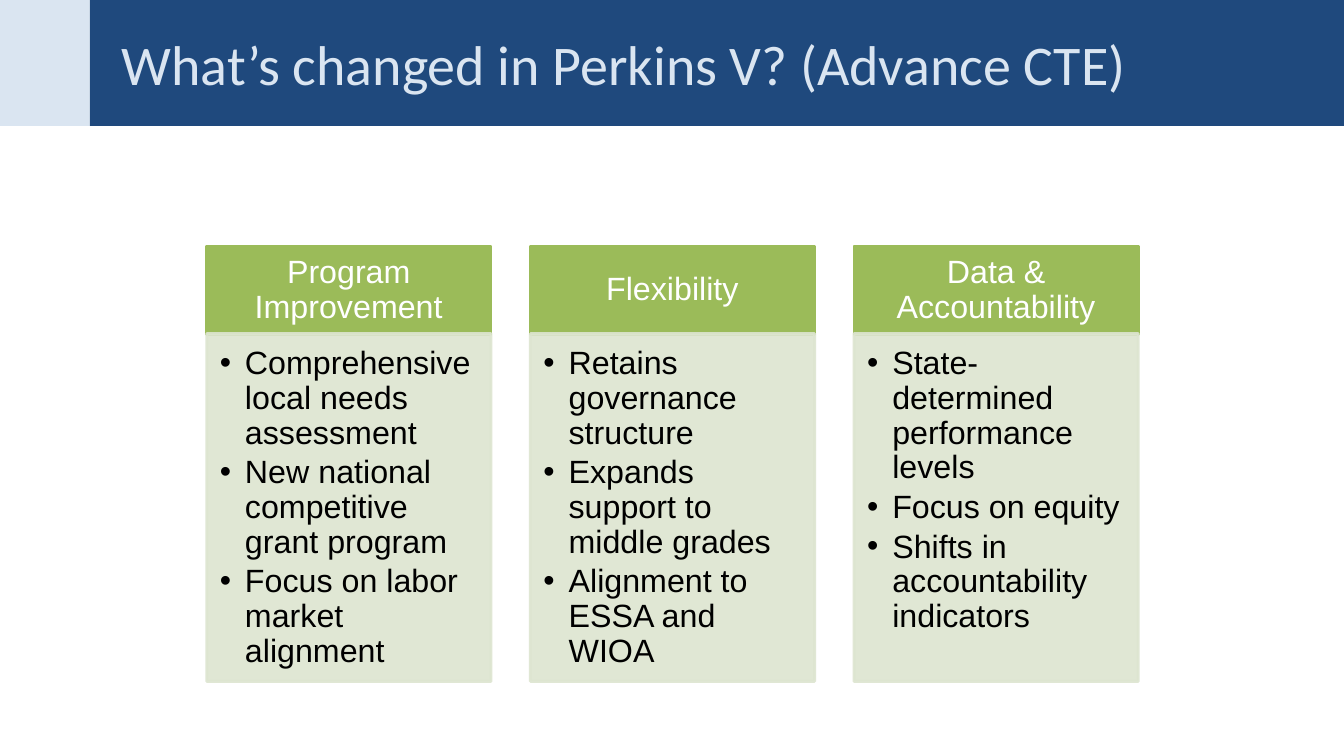
from dataclasses import dataclass

from lxml import etree
from pptx import Presentation
from pptx.dml.color import RGBColor
from pptx.enum.shapes import MSO_SHAPE
from pptx.enum.text import MSO_ANCHOR, PP_ALIGN
from pptx.oxml.ns import qn
from pptx.util import Inches, Pt

RECT = MSO_SHAPE.RECTANGLE
TOP, MIDDLE = MSO_ANCHOR.TOP, MSO_ANCHOR.MIDDLE
LEFT, CENTER = PP_ALIGN.LEFT, PP_ALIGN.CENTER


@dataclass(frozen=True)
class Theme:
    navy: str = "1F497D"
    pale: str = "DAE5F1"
    green: str = "9BBB59"
    sage: str = "DDE5D0"
    white: str = "FFFFFF"
    black: str = "000000"
    title_font: str = "Calibri"
    body_font: str = "Arial"
    title_size: int = 40
    body_size: int = 23


THEME = Theme()

CARDS = [
    ("Program Improvement", [
        "Comprehensive local needs assessment",
        "New national competitive grant program",
        "Focus on labor market alignment"]),
    ("Flexibility", [
        "Retains governance structure",
        "Expands support to middle grades",
        "Alignment to ESSA and WIOA"]),
    ("Data & Accountability", [
        "State-determined performance levels",
        "Focus on equity",
        "Shifts in accountability indicators"]),
]

# Card grid, in inches
CARD_LEFT, CARD_STEP, CARD_WIDTH = 2.05, 3.21, 2.82
HEAD_TOP, HEAD_HEIGHT = 2.44, 0.88
BODY_TOP, BODY_HEIGHT = 3.31, 3.45


def assign(target, values):
    for name, value in values.items():
        setattr(target, name, value)


def add_rect(slide, box, color, edge=False):
    """Add a plain rectangle, with an edge of its own colour if asked."""
    shape = slide.shapes.add_shape(RECT, *map(Inches, box))
    shape.shadow.inherit = False
    shape.fill.solid()
    shape.fill.fore_color.rgb = RGBColor.from_string(color)
    if edge:
        shape.line.color.rgb = RGBColor.from_string(color)
        shape.line.width = Pt(2)
    else:
        shape.line.fill.background()
    return shape


def set_alpha(shape, percent):
    for color in shape.element.spPr.iter(qn("a:srgbClr")):
        etree.SubElement(color, qn("a:alpha"), val=str(percent * 1000))


def set_frame(shape, insets, anchor):
    sides = ("margin_left", "margin_top", "margin_right", "margin_bottom")
    assign(shape.text_frame, {
        "word_wrap": True, "vertical_anchor": anchor,
        **dict(zip(sides, map(Inches, insets)))})


def add_bullet(para):
    props = para._p.get_or_add_pPr()
    assign_xml = {"marL": Inches(0.25), "indent": Inches(-0.25)}
    for name, value in assign_xml.items():
        props.set(name, str(value))
    etree.SubElement(props, qn("a:buFont"), typeface=THEME.body_font)
    etree.SubElement(props, qn("a:buChar"), char="•")


def write(shape, lines, color, font=THEME.body_font, size=THEME.body_size,
          align=LEFT, spacing=0.9, bullets=False):
    frame = shape.text_frame
    for index, line in enumerate(lines):
        para = frame.add_paragraph() if index else frame.paragraphs[0]
        if bullets:
            add_bullet(para)
        assign(para, {"alignment": align, "line_spacing": spacing})
        if index:
            para.space_before = Pt(3.5)
        run = para.add_run()
        run.text = line
        assign(run.font, {"name": font, "size": Pt(size)})
        run.font.color.rgb = RGBColor.from_string(color)


def add_banner(slide, title):
    add_rect(slide, (0.89, 0, 12.44, 1.25), THEME.navy)
    add_rect(slide, (0, 0, 0.89, 1.25), THEME.pale)
    box = slide.shapes.add_textbox(*map(Inches, (1.11, 0.21, 12, 0.83)))
    set_frame(box, (0.1, 0.05, 0.1, 0.05), MIDDLE)
    write(box, [title], THEME.pale, THEME.title_font, THEME.title_size,
          spacing=1.0)


def add_card(slide, left, heading, points):
    head = add_rect(slide, (left, HEAD_TOP, CARD_WIDTH, HEAD_HEIGHT),
                    THEME.green, edge=True)
    set_frame(head, (0.18, 0.1, 0.18, 0.1), MIDDLE)
    write(head, [heading], THEME.white, align=CENTER)

    body = add_rect(slide, (left, BODY_TOP, CARD_WIDTH, BODY_HEIGHT),
                    THEME.sage, edge=True)
    set_alpha(body, 90)
    set_frame(body, (0.13, 0.13, 0.18, 0.2), TOP)
    write(body, points, THEME.black, bullets=True)


def main():
    deck = Presentation()
    assign(deck, {"slide_width": Inches(13.33), "slide_height": Inches(7.5)})
    slide = deck.slides.add_slide(deck.slide_layouts[6])

    # Title band
    add_banner(slide, "What’s changed in Perkins V? (Advance CTE)")

    # Three cards
    for index, (heading, points) in enumerate(CARDS):
        add_card(slide, CARD_LEFT + index * CARD_STEP, heading, points)

    deck.save("out.pptx")


if __name__ == "__main__":
    main()
